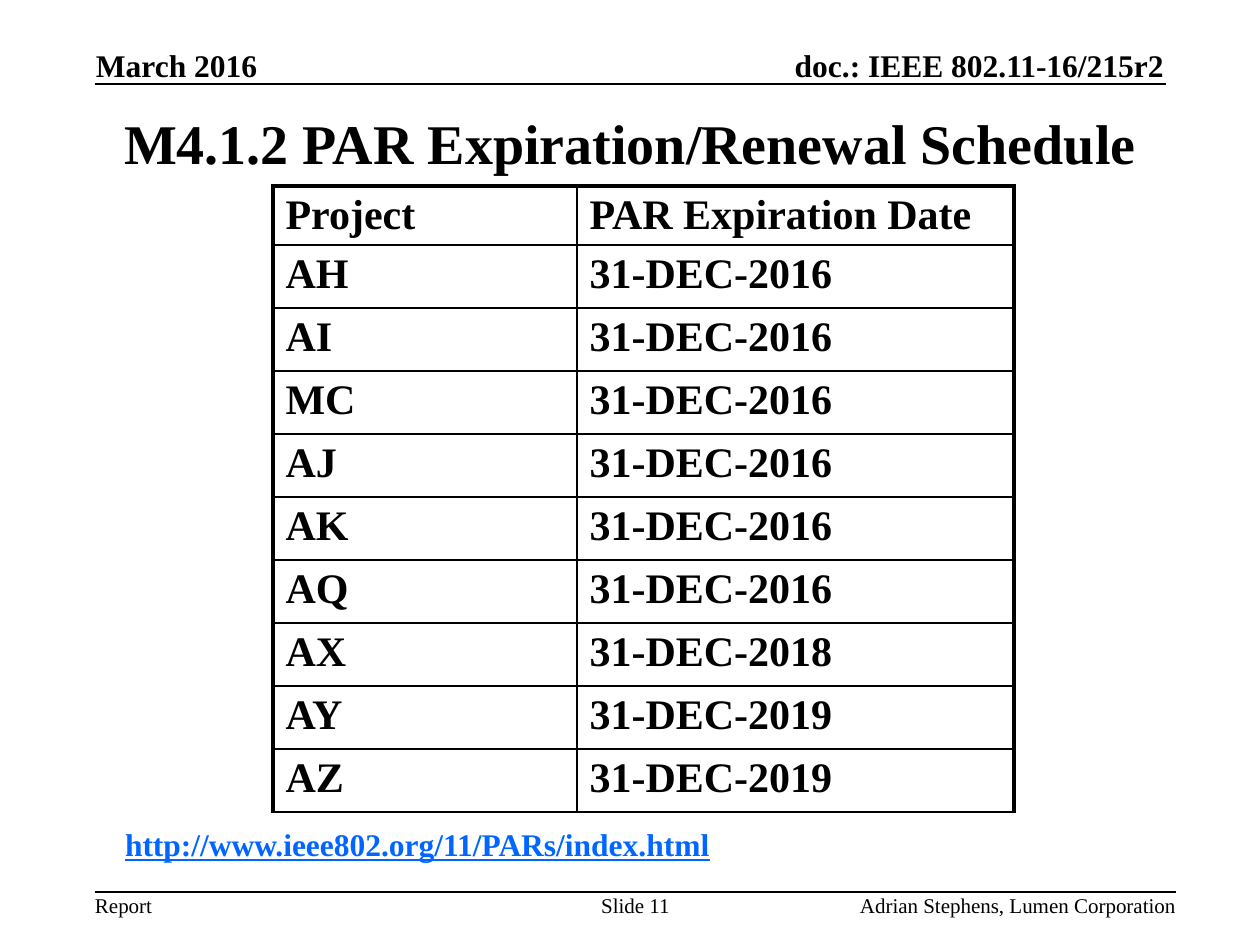
"""Build the PAR expiration schedule slide."""
from lxml import etree
from pptx import Presentation
from pptx.dml.color import RGBColor
from pptx.enum.shapes import MSO_CONNECTOR
from pptx.enum.text import MSO_ANCHOR, MSO_AUTO_SIZE, PP_ALIGN
from pptx.oxml.ns import qn
from pptx.util import Pt

PX = 914400 / 126
BLACK = RGBColor(0, 0, 0)
WHITE = RGBColor(255, 255, 255)
LINK_BLUE = RGBColor(0, 102, 255)
FONT = "Times New Roman"
LEFT, CENTER, RIGHT = PP_ALIGN.LEFT, PP_ALIGN.CENTER, PP_ALIGN.RIGHT
TOP, MIDDLE, BOTTOM = MSO_ANCHOR.TOP, MSO_ANCHOR.MIDDLE, MSO_ANCHOR.BOTTOM
STRAIGHT = MSO_CONNECTOR.STRAIGHT
FIT_SHAPE, FIT_NONE = MSO_AUTO_SIZE.SHAPE_TO_FIT_TEXT, MSO_AUTO_SIZE.NONE
THIN, THICK = 1, 2.25

HEADER = {"size": Pt(18), "bold": True}
FOOTER = {"size": Pt(12)}
TITLE = {"size": Pt(32), "bold": True}
CELL = {"size": Pt(24), "bold": True}
LINK = {"size": Pt(18), "bold": True, "underline": True}

SCHEDULE = [
    ("Project", "PAR Expiration Date"),
    ("AH", "31-DEC-2016"),
    ("AI", "31-DEC-2016"),
    ("MC", "31-DEC-2016"),
    ("AJ", "31-DEC-2016"),
    ("AK", "31-DEC-2016"),
    ("AQ", "31-DEC-2016"),
    ("AX", "31-DEC-2018"),
    ("AY", "31-DEC-2019"),
    ("AZ", "31-DEC-2019"),
]
COLUMN_WIDTHS = (304, 437)
HEAD_HEIGHT, ROW_HEIGHT = 59, 63
HEAD_MARGIN, ROW_MARGIN = 2, 6


def px(*lengths):
    """Turn pixel lengths into EMU."""
    return [round(length * PX) for length in lengths]


def write(frame, text, style, color=BLACK, align=LEFT):
    """Put one styled run into a text frame."""
    para = frame.paragraphs[0]
    para.alignment = align
    span = para.add_run()
    span.text = text
    for name, value in {"name": FONT, **style}.items():
        setattr(span.font, name, value)
    span.font.color.rgb = color


def add_text(page, area, text, style, color=BLACK, align=LEFT,
             anchor=TOP, margins=(0, 0), wrap=False):
    """Add a text box with horizontal and vertical margins."""
    frame = page.shapes.add_textbox(*px(*area)).text_frame
    across, down = px(*margins)
    layout = {
        "margin_left": across, "margin_right": across,
        "margin_top": down, "margin_bottom": down,
        "word_wrap": wrap, "vertical_anchor": anchor,
        "auto_size": FIT_NONE if wrap else FIT_SHAPE,
    }
    for name, value in layout.items():
        setattr(frame, name, value)
    write(frame, text, style, color, align)


def add_rule(page, left, right, y):
    """Add a thin horizontal line."""
    rule = page.shapes.add_connector(STRAIGHT, *px(left, y, right, y))
    rule.line.color.rgb = BLACK
    rule.line.width = Pt(THIN)
    etree.SubElement(rule._element.spPr, qn("a:effectLst"))


def set_borders(cell, widths):
    """Draw black cell borders from a dict of side to point width."""
    properties = cell._tc.get_or_add_tcPr()
    for side, width in widths.items():
        line = etree.SubElement(properties, qn(f"a:ln{side}"), w=str(Pt(width)))
        fill = etree.SubElement(line, qn("a:solidFill"))
        etree.SubElement(fill, qn("a:srgbClr"), val=str(BLACK))


def add_schedule(page, left, top):
    """Add the schedule table with a thick frame open at the bottom."""
    heights = [HEAD_HEIGHT] + [ROW_HEIGHT] * (len(SCHEDULE) - 1)
    area = px(left, top, sum(COLUMN_WIDTHS), sum(heights))
    table = page.shapes.add_table(len(SCHEDULE), len(COLUMN_WIDTHS), *area).table
    table.first_row = table.horz_banding = False
    for column, width in zip(table.columns, px(*COLUMN_WIDTHS)):
        column.width = width
    for row, height in zip(table.rows, px(*heights)):
        row.height = height
    last = len(COLUMN_WIDTHS) - 1
    for r, texts in enumerate(SCHEDULE):
        for c, text in enumerate(texts):
            cell = table.cell(r, c)
            set_borders(cell, {
                "L": THICK if c == 0 else THIN,
                "R": THICK if c == last else THIN,
                "T": THICK if r == 0 else THIN,
                "B": THIN,
            })
            cell.fill.solid()
            cell.fill.fore_color.rgb = WHITE
            cell.margin_bottom, = px(ROW_MARGIN if r else HEAD_MARGIN)
            write(cell.text_frame, text, CELL)


def main():
    """Build and save the slide."""
    deck = Presentation()
    deck.slide_width, deck.slide_height = px(1260, 945)
    page = deck.slides.add_slide(deck.slide_layouts[6])
    add_text(page, (727, 46, 437, 38), "doc.: IEEE 802.11-16/215r2", HEADER,
             align=RIGHT, anchor=BOTTOM)
    add_rule(page, 95, 1166, 84)
    add_text(page, (95, 893, 58, 25), "Report", FOOTER)
    add_rule(page, 95, 1176, 892)
    add_text(page, (95, 95, 1071, 95), "M4.1.2 PAR Expiration/Renewal Schedule",
             TITLE, align=CENTER, anchor=MIDDLE, margins=(13, 6), wrap=True)
    add_schedule(page, 273, 186)
    add_text(page, (112, 819, 634, 50), "http://www.ieee802.org/11/PARs/index.html",
             LINK, color=LINK_BLUE, margins=(13, 6))
    add_text(page, (856, 893, 320, 25), "Adrian Stephens, Lumen Corporation",
             FOOTER, align=RIGHT)
    add_text(page, (96, 46, 170, 38), "March 2016", HEADER, anchor=BOTTOM)
    add_text(page, (599, 893, 73, 25), "Slide 11", FOOTER, align=CENTER)
    deck.save("out.pptx")


if __name__ == "__main__":
    main()
